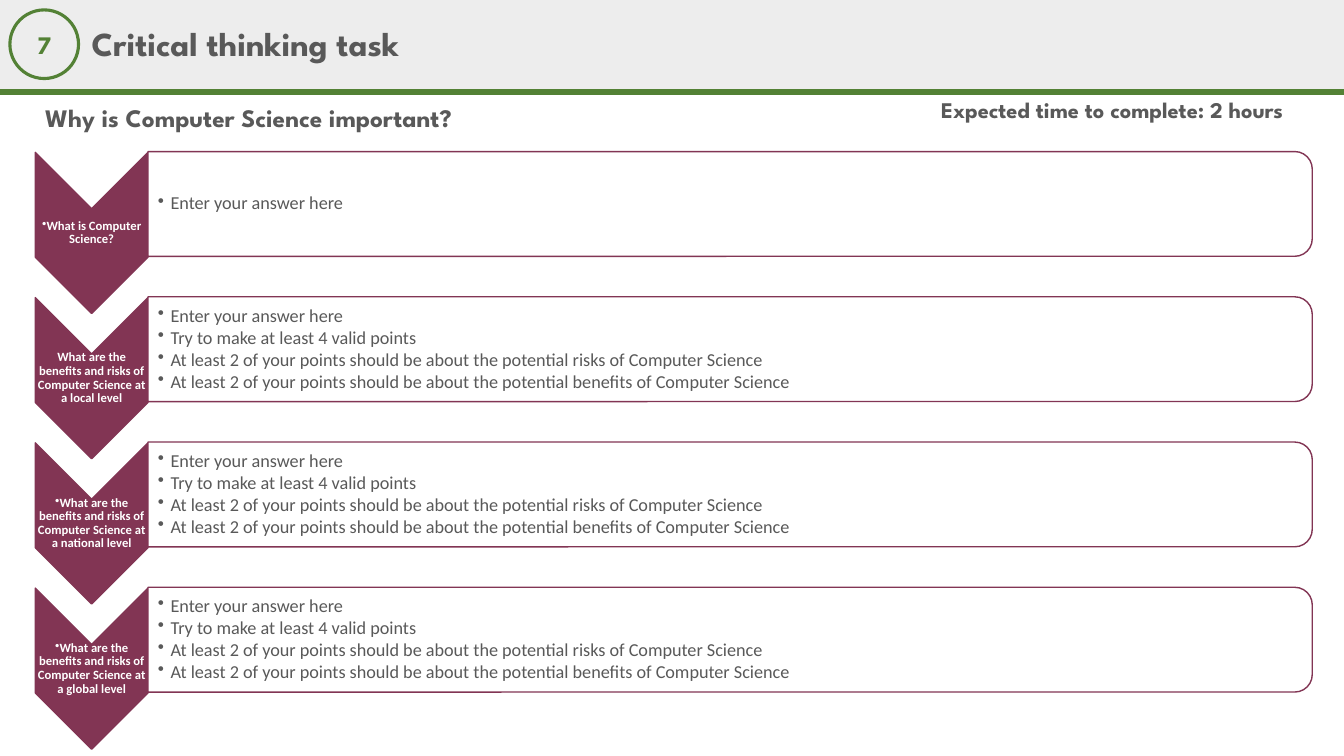
"""Build the critical thinking task slide with four question rows."""
from lxml import etree
from pptx import Presentation
from pptx.dml.color import RGBColor
from pptx.enum import shapes, text
from pptx.oxml import ns
from pptx.util import Cm, Pt

TITLE = "Critical thinking task"
NUMBER = "7"
SUBTITLE = "Why is Computer Science important?"
DURATION = "Expected time to complete: 2 hours"
PROMPT = "Enter your answer here"
GUIDANCE = [
    PROMPT,
    "Try to make at least 4 valid points",
    "At least 2 of your points should be about the potential risks of Computer Science",
    "At least 2 of your points should be about the potential benefits of Computer Science",
]
LEVEL_QUESTION = "What are the benefits and risks of Computer Science at a {} level"
ROWS = [
    ("What is Computer Science?", True, [PROMPT]),
    (LEVEL_QUESTION.format("local"), False, GUIDANCE),
    (LEVEL_QUESTION.format("national"), True, GUIDANCE),
    (LEVEL_QUESTION.format("global"), True, GUIDANCE),
]

GREEN, PLUM, GREY, PALE, WHITE = "538135", "823554", "595959", "EDEDED", "FFFFFF"
HEADING_FONT, BODY_FONT = "League Spartan", "Calibri"
SLIDE_WIDTH, SLIDE_HEIGHT = 33.87, 19.05
HEADER_HEIGHT = 2.31
ROW_PITCH = 3.66
CHEVRON_X, CHEVRON_Y = 2.31, 5.87
CHEVRON_LENGTH, CHEVRON_WIDTH = 4.06, 2.84
PANEL_X, PANEL_Y = 18.4, 5.14
PANEL_WIDTH, PANEL_HEIGHT = 29.34, 2.64
DEFAULT_INSETS = (0.25, 0.13, 0.25, 0.13)
LABEL_INSETS = (0.03, 0.03, 0.03, 0.03)
ANSWER_INSETS = (0.25, 0.03, 0.03, 0.03)


def color(value):
    return RGBColor.from_string(value)


def place(shape, left, top, width, height):
    shape.left, shape.top = Cm(left), Cm(top)
    shape.width, shape.height = Cm(width), Cm(height)


def add_bullet(paragraph, indent):
    properties = paragraph._p.get_or_add_pPr()
    properties.set("marL", str(Cm(indent)))
    properties.set("indent", str(-Cm(indent)))
    etree.SubElement(properties, ns.qn("a:buChar"), char="•")


def write(shape, lines, size, fill, font=HEADING_FONT, bold=True, align="LEFT",
          anchor="MIDDLE", insets=DEFAULT_INSETS, spacing=0.9, after=0, bullet=None):
    frame = shape.text_frame
    frame.word_wrap = True
    frame.auto_size = text.MSO_AUTO_SIZE.NONE
    frame.vertical_anchor = text.MSO_ANCHOR[anchor]
    (frame.margin_left, frame.margin_top,
     frame.margin_right, frame.margin_bottom) = map(Cm, insets)
    frame.text = "\n".join(lines)
    for paragraph in frame.paragraphs:
        paragraph.alignment = text.PP_ALIGN[align]
        paragraph.line_spacing = spacing
        paragraph.space_before = Pt(0)
        paragraph.space_after = Pt(after)
        if bullet is not None:
            add_bullet(paragraph, bullet)
        for run in paragraph.runs:
            run.font.name, run.font.size, run.font.bold = font, Pt(size), bold
            run.font.color.rgb = color(fill)


def add_box(slide, box, lines, size, fill, **style):
    write(slide.shapes.add_textbox(*map(Cm, box)), lines, size, fill, **style)


def add_shape(slide, kind, box, fill=None, line=None, weight=1):
    shape = slide.shapes.add_shape(shapes.MSO_SHAPE[kind], *map(Cm, box))
    shape.shadow.inherit = False
    if fill:
        shape.fill.solid()
        shape.fill.fore_color.rgb = color(fill)
    else:
        shape.fill.background()
    if line:
        shape.line.color.rgb = color(line)
        shape.line.width = Pt(weight)
    else:
        shape.line.fill.background()
    return shape


def centred(x, y, width, height):
    return x - width / 2, y - height / 2, width, height


def add_header(slide):
    add_shape(slide, "RECTANGLE", (0, 0, SLIDE_WIDTH, HEADER_HEIGHT), PALE)
    rule = slide.shapes.add_connector(
        shapes.MSO_CONNECTOR.STRAIGHT, 0, Cm(HEADER_HEIGHT), Cm(SLIDE_WIDTH), Cm(HEADER_HEIGHT))
    rule.line.color.rgb = color(GREEN)
    rule.line.width = Pt(4.5)
    etree.SubElement(rule.element.spPr, ns.qn("a:effectLst"))
    add_box(slide, (23.47, 2.36, 10.4, 1.02), [DURATION], 16, GREY, anchor="TOP")
    badge = add_shape(slide, "OVAL", (0.25, 0.25, 1.73, 1.73), line=GREEN, weight=2.25)
    write(badge, [NUMBER], 18, GREEN, align="CENTER", spacing=1)
    add_box(slide, (0.89, 2.51, 14.5, 1.02), [SUBTITLE], 18, GREY)
    title = slide.shapes.title
    place(title, 2.06, 0.23, 26.19, 1.85)
    write(title, [TITLE], 24, GREY)
    title.element.getparent().append(title.element)


def add_row(slide, offset, question, bulleted, answers):
    chevron = add_shape(
        slide, "CHEVRON",
        centred(CHEVRON_X, CHEVRON_Y + offset, CHEVRON_LENGTH, CHEVRON_WIDTH), PLUM, PLUM)
    chevron.rotation = 90
    add_box(slide, centred(CHEVRON_X, CHEVRON_Y + offset, CHEVRON_WIDTH, 1.22),
            [question], 9, WHITE, font=BODY_FONT, align="CENTER",
            insets=LABEL_INSETS, bullet=0 if bulleted else None)
    panel = add_shape(
        slide, "ROUND_2_SAME_RECTANGLE",
        centred(PANEL_X, PANEL_Y + offset, PANEL_HEIGHT, PANEL_WIDTH), WHITE, PLUM)
    panel.rotation = 90
    add_box(slide, centred(PANEL_X, PANEL_Y + offset, PANEL_WIDTH, 2.39),
            answers, 13, GREY, font=BODY_FONT, bold=False,
            insets=ANSWER_INSETS, after=1.7, bullet=0.32)


def main():
    presentation = Presentation()
    presentation.slide_width, presentation.slide_height = Cm(SLIDE_WIDTH), Cm(SLIDE_HEIGHT)
    slide = presentation.slides.add_slide(presentation.slide_layouts[5])
    add_header(slide)
    for index, row in enumerate(ROWS):
        add_row(slide, index * ROW_PITCH, *row)
    presentation.save("out.pptx")


if __name__ == "__main__":
    main()
